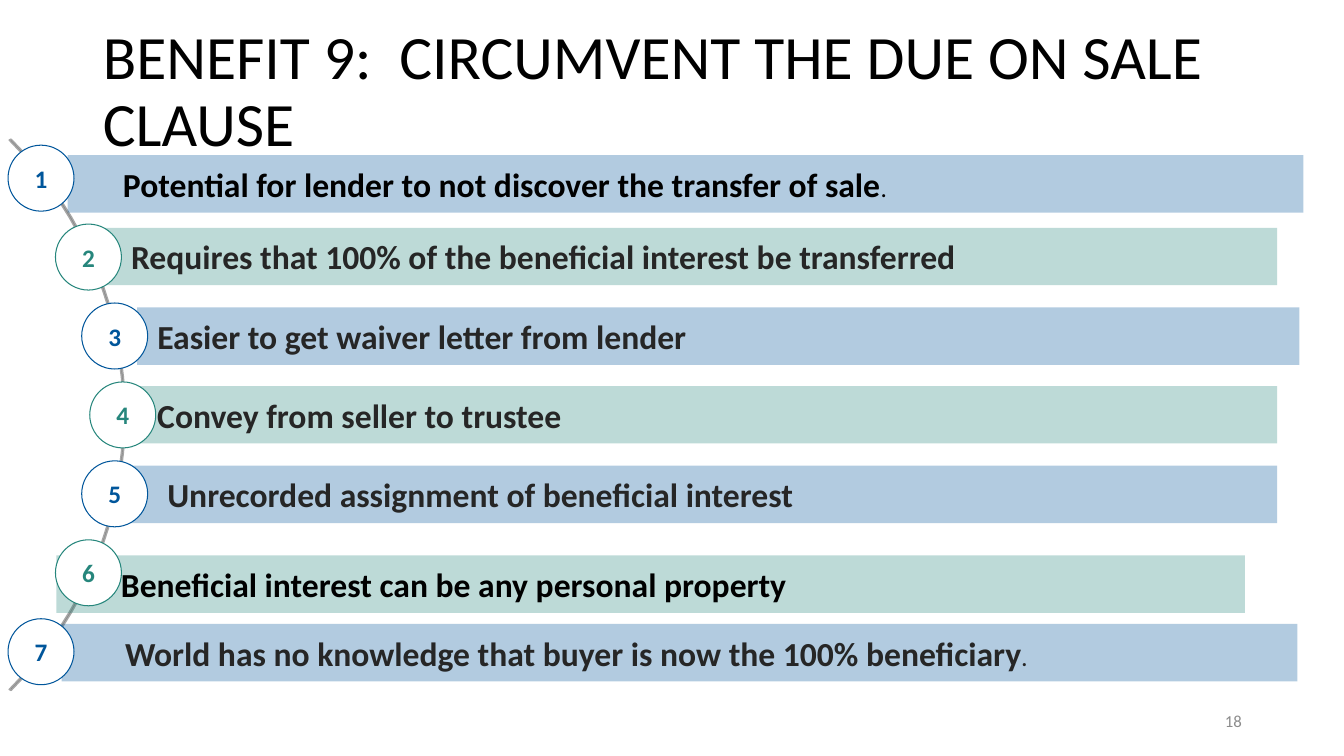
import pptx
import pptx.util
import pptx.dml.color
import pptx.enum.shapes
import pptx.enum.text
import lxml.etree
from pptx.oxml.ns import qn

RGBColor = pptx.dml.color.RGBColor
BLUE = RGBColor(0x00, 0x56, 0x9B)
GREEN = RGBColor(0x26, 0x86, 0x7C)
BLACK = RGBColor(0x00, 0x00, 0x00)
DARK = RGBColor(0x26, 0x26, 0x26)
NUMBER_GRAY = RGBColor(0x8C, 0x8C, 0x8C)
ARC_FILL = RGBColor(0x80, 0x80, 0x80)
ARC_LINE = RGBColor(0xA6, 0xA6, 0xA6)
WHITE = RGBColor(0xFF, 0xFF, 0xFF)
ALIGN = pptx.enum.text.PP_ALIGN
MIDDLE = pptx.enum.text.MSO_ANCHOR.MIDDLE
SHAPE = pptx.enum.shapes.MSO_SHAPE

prs = pptx.Presentation()
prs.slide_width = pptx.util.Inches(13.33)
prs.slide_height = pptx.util.Inches(7.5)
COL = prs.slide_width / 100
ROW = prs.slide_height / 100
s = prs.slides.add_slide(prs.slide_layouts[5])


def grid(x, y, w, h):
    return round(x * COL), round(y * ROW), round(w * COL), round(h * ROW)


def add_run(p, text, size, color, bold=False):
    r = p.add_run()
    r.text = text
    r.font.name = "Calibri"
    r.font.size = pptx.util.Pt(size)
    r.font.bold = bold
    r.font.color.rgb = color


title = s.shapes.title
title.left, title.top, title.width, title.height = grid(6.9, 0, 86.25, 24.67)
tf = title.text_frame
tf.word_wrap = True
tf.auto_size = pptx.enum.text.MSO_AUTO_SIZE.NONE
tf.vertical_anchor = MIDDLE
p = tf.paragraphs[0]
p.alignment = ALIGN.LEFT
p.line_spacing = 0.9
add_run(p, "BENEFIT 9:  CIRCUMVENT THE DUE ON SALE CLAUSE", 44, BLACK)

sp = s.shapes.add_textbox(*grid(70.65, 92.67, 22.5, 5.33))
tf = sp.text_frame
tf.word_wrap = True
tf.vertical_anchor = MIDDLE
p = tf.paragraphs[0]
p.alignment = ALIGN.RIGHT
add_run(p, "18", 12, NUMBER_GRAY)

arc_edges = [
    ((0.83, 18.4), (12.15, 38.53), (12.15, 71.2), (0.83, 91.33)),
    ((0.68, 91.2), (12, 71.07), (12, 38.67), (0.68, 18.53)),
]
STEPS = 32
points = []
for edge in arc_edges:
    for i in range(STEPS + 1):
        t = i / STEPS
        weights = ((1 - t) ** 3, 3 * t * (1 - t) ** 2, 3 * t ** 2 * (1 - t), t ** 3)
        x = sum(w * pt[0] for w, pt in zip(weights, edge))
        y = sum(w * pt[1] for w, pt in zip(weights, edge))
        points.append((round(x * COL), round(y * ROW)))
builder = s.shapes.build_freeform(*points[0])
builder.add_line_segments(points[1:], close=True)
arc = builder.convert_to_shape()
arc.shadow.inherit = False
arc.fill.solid()
arc.fill.fore_color.rgb = ARC_FILL
arc.line.color.rgb = ARC_LINE
arc.line.width = pptx.util.Pt(1)

CIRCLE_LEFT = [6.68, 6.08, 4.13, 0.6]
CIRCLE_TOP, CIRCLE_STEP = 19.2, 10.44
BAR_HEIGHT = 7.6
benefits = [
    (5.03, 20.53, 91.95, 9.15, BLACK, "Potential for lender to not discover the transfer of sale", (18, False)),
    (6.6, 30.13, 88.43, 9.75, DARK, "Requires that 100% of the beneficial interest be transferred", None),
    (10.2, 40.67, 86.48, 11.7, DARK, "Easier to get waiver letter from lender", None),
    (9.15, 51.07, 85.88, 11.7, DARK, "Convey from seller to trustee", None),
    (8.55, 61.6, 86.48, 12.45, DARK, "Unrecorded assignment of beneficial interest", None),
    (4.2, 73.47, 88.43, 9, BLACK, "Beneficial interest can be any personal property", None),
    (4.58, 82.53, 91.95, 9.3, DARK, "World has no knowledge that buyer is now the 100% beneficiary", (15, True)),
]
for i, (left, top, width, text_left, color, text, period) in enumerate(benefits):
    accent = GREEN if i % 2 else BLUE

    bar = s.shapes.add_shape(SHAPE.RECTANGLE, *grid(left, top, width, BAR_HEIGHT))
    bar.shadow.inherit = False
    bar.fill.solid()
    bar.fill.fore_color.rgb = accent
    clr = bar.fill._xPr.find(qn("a:solidFill"))[0]
    lxml.etree.SubElement(clr, qn("a:alpha")).set("val", "30000")
    bar.line.fill.background()
    tf = bar.text_frame
    tf.word_wrap = True
    tf.vertical_anchor = MIDDLE
    tf.margin_left = round((text_left - left) * COL)
    tf.margin_top = tf.margin_bottom = 0
    p = tf.paragraphs[0]
    p.alignment = ALIGN.LEFT
    add_run(p, text, 24, color, True)
    if period:
        size, bold = period
        add_run(p, ".", size, color, bold)

    circle = s.shapes.add_shape(
        SHAPE.OVAL, *grid(CIRCLE_LEFT[abs(i - 3)], CIRCLE_TOP + i * CIRCLE_STEP, 4.91, 8.73))
    circle.shadow.inherit = False
    circle.fill.solid()
    circle.fill.fore_color.rgb = WHITE
    circle.line.color.rgb = accent
    circle.line.width = pptx.util.Pt(0)
    tf = circle.text_frame
    tf.vertical_anchor = MIDDLE
    p = tf.paragraphs[0]
    p.alignment = ALIGN.CENTER
    add_run(p, str(i + 1), 18, accent, True)

prs.save("out.pptx")
